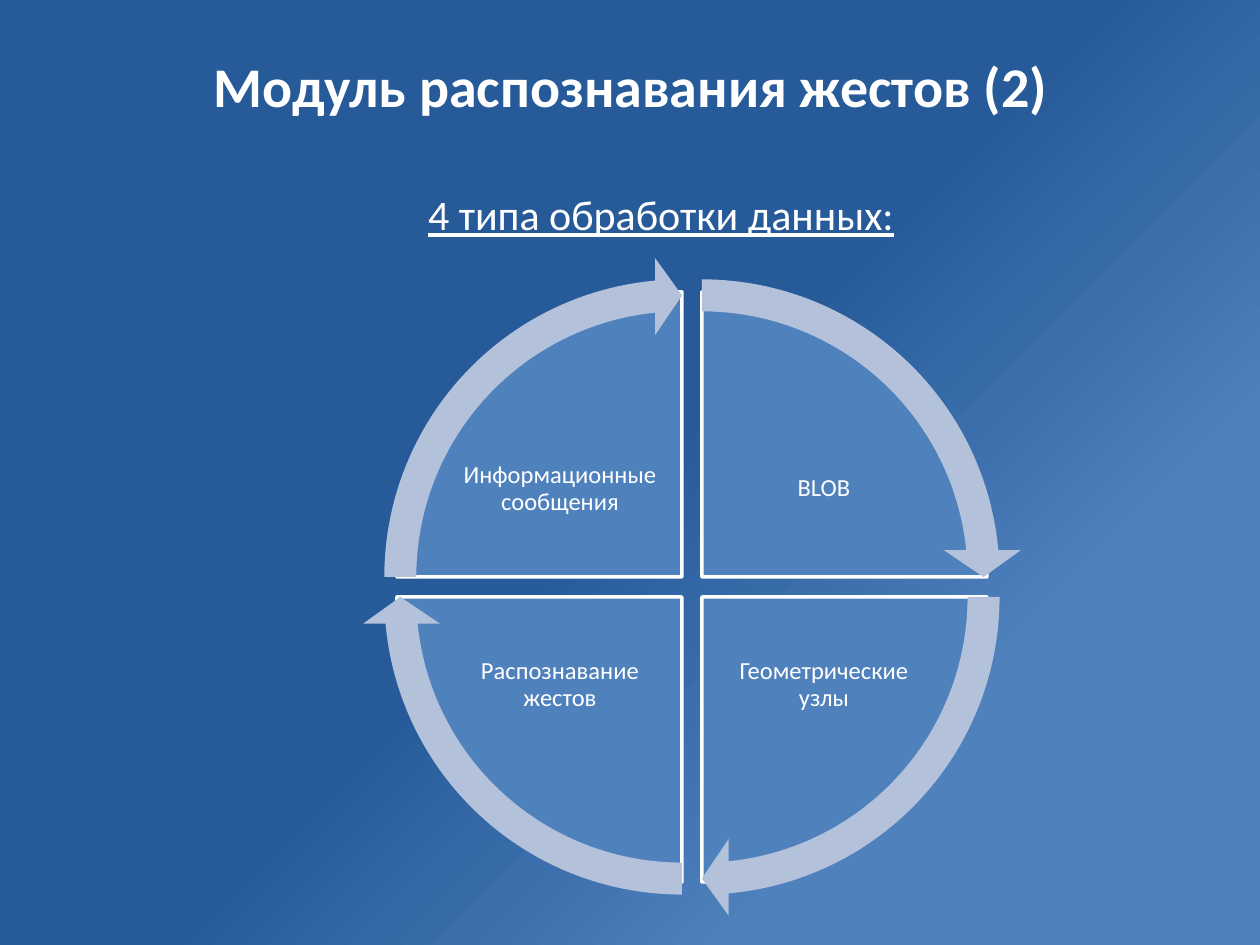
from pptx import Presentation
from pptx import util as u
from pptx.dml.color import RGBColor
from pptx.enum import shapes, text

TITLE = "Модуль распознавания жестов (2)"
SUBTITLE = "4 типа обработки данных:"
SECTORS = [
    ("BLOB", 1, -1, 162),
    ("Геометрические узлы", 1, 1, 0),
    ("Распознавание жестов", -1, 1, 54),
    ("Информационные сообщения", -1, -1, 108),
]
WHITE, NAVY, BLUE, PALE = "FFFFFF", "265A99", "4F81BD", "B3C1DB"
CENTER_X, CENTER_Y, HALF_GAP = 692, 587, 10
PIE, RING = 570, 640
LABEL_W, LABEL_H, LABEL_DX, LABEL_DY = 210, 156, 122, 88
FULL_TURN, QUARTER, ARROW_SWEEP = 216, 54, 50.73


def px(n):
    return u.Emu(round(n * 914400 / 126))


def color(value):
    return RGBColor.from_string(value)


def box(x, y, w, h):
    return px(x), px(y), px(w), px(h)


def around(x, y, w, h):
    return box(x - w / 2, y - h / 2, w, h)


def write(holder, words, size, inset=None, spacing=None, bold=False, underline=False):
    frame = holder.text_frame
    frame.word_wrap = True
    frame.vertical_anchor = text.MSO_ANCHOR.MIDDLE
    if inset is not None:
        frame.margin_left = frame.margin_right = px(inset)
        frame.margin_top = frame.margin_bottom = px(inset)
    line = frame.paragraphs[0]
    line.alignment = text.PP_ALIGN.CENTER
    if spacing:
        line.line_spacing = spacing
    run = line.add_run()
    run.text = words
    run.font.name = "Calibri"
    run.font.size = u.Pt(size)
    run.font.bold = bold
    run.font.underline = underline
    run.font.color.rgb = color(WHITE)


def draw(slide, kind, place, fill, adjustments, outline=None):
    part = slide.shapes.add_shape(kind, *place)
    part.shadow.inherit = False
    for i, value in enumerate(adjustments):
        part.adjustments[i] = value
    part.fill.solid()
    part.fill.fore_color.rgb = color(fill)
    if outline:
        part.line.color.rgb = color(outline)
        part.line.width = u.Pt(2)
    else:
        part.line.fill.background()


def main():
    deck = Presentation()
    deck.slide_width, deck.slide_height = px(1260), px(945)
    slide = deck.slides.add_slide(deck.slide_layouts[5])

    backdrop = slide.background.fill
    backdrop.gradient()
    backdrop.gradient_angle = 315
    for stop, (position, tone) in zip(backdrop.gradient_stops, [(0.5, NAVY), (0.76, BLUE)]):
        stop.position = position
        stop.color.rgb = color(tone)

    title = slide.shapes.title
    title.left, title.top, title.width, title.height = box(64, 37, 1134, 97)
    write(title, TITLE, 32, bold=True)

    for words, side, level, start in SECTORS:
        x, y = CENTER_X + side * HALF_GAP, CENTER_Y + level * HALF_GAP
        draw(slide, shapes.MSO_SHAPE.PIE, around(x, y, PIE, PIE), BLUE,
             [start, (start + QUARTER) % FULL_TURN], WHITE)
        label = slide.shapes.add_textbox(
            *around(x + side * LABEL_DX, y + level * LABEL_DY, LABEL_W, LABEL_H))
        write(label, words, 14, inset=3, spacing=0.9)

    for words, side, level, start in SECTORS:
        x, y = CENTER_X + side * HALF_GAP, CENTER_Y + level * HALF_GAP
        draw(slide, shapes.MSO_SHAPE.CIRCULAR_ARROW, around(x, y, RING, RING), PALE,
             [0.05, 3.28, start + ARROW_SWEEP, start, 0.06])

    subtitle = slide.shapes.add_textbox(*box(94, 165, 1134, 97))
    write(subtitle, SUBTITLE, 24, underline=True)

    deck.save("out.pptx")


if __name__ == "__main__":
    main()
